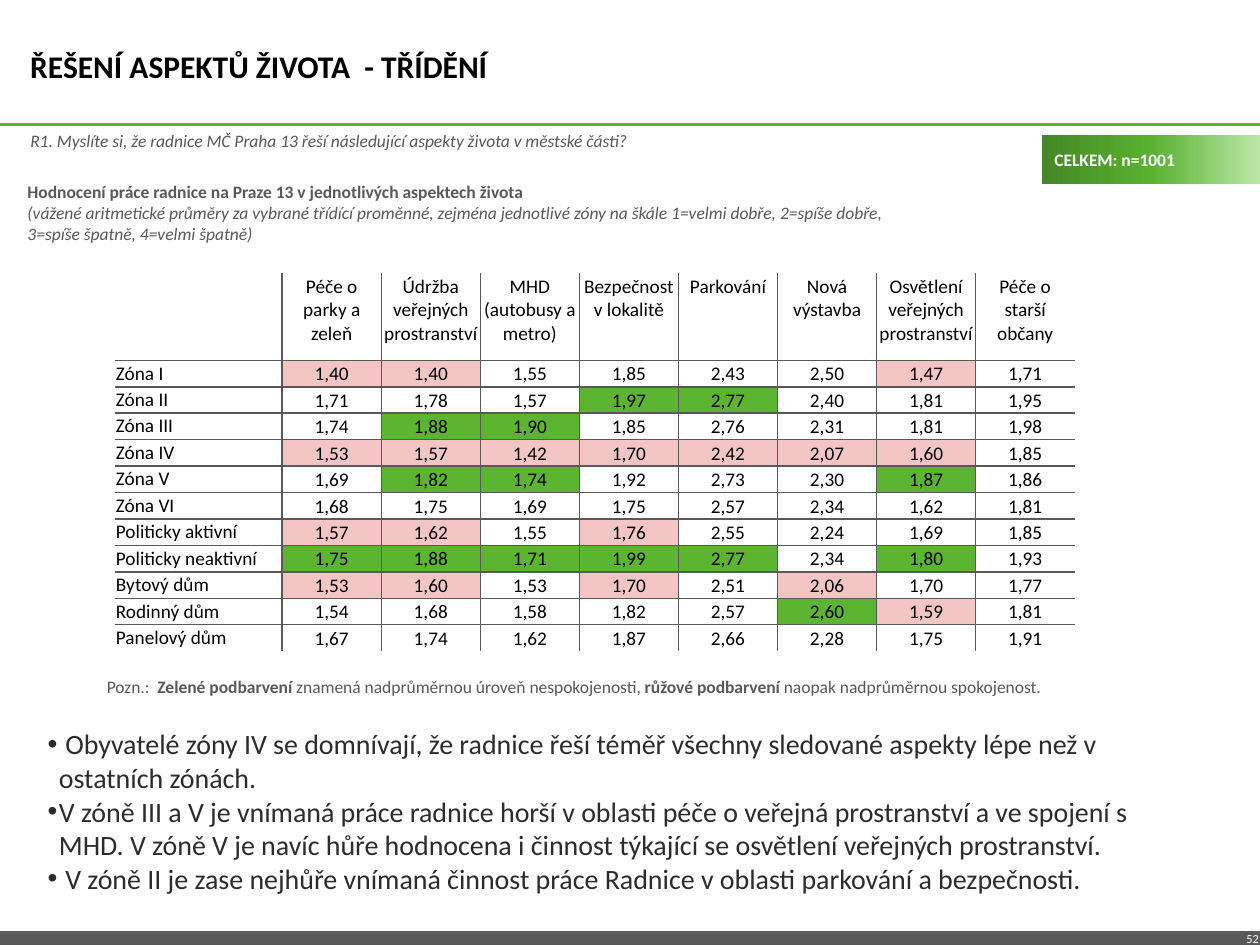
"""Build the slide comparing ratings of municipal services across resident groups."""
import copy

import pptx
import pptx.util
from lxml import etree
from pptx.dml.color import RGBColor
from pptx.enum.shapes import MSO_CONNECTOR, MSO_SHAPE
from pptx.enum.text import MSO_ANCHOR, PP_ALIGN
from pptx.oxml.ns import qn
from pptx.util import Inches

GREEN = RGBColor(0x5B, 0xB5, 0x31)
PINK = RGBColor(0xF3, 0xC6, 0xC5)
GRAY = RGBColor(0x59, 0x59, 0x59)
DARK = RGBColor(0x2C, 0x2C, 0x2C)
BLACK = RGBColor(0x00, 0x00, 0x00)
WHITE = RGBColor(0xFF, 0xFF, 0xFF)
BADGE_STOPS = [
    (0, RGBColor(0x44, 0x88, 0x25)),
    (0.5, RGBColor(0x58, 0xB2, 0x30)),
    (1, RGBColor(0xBB, 0xE7, 0xA7)),
]
FONT = "Calibri"

TITLE = "ŘEŠENÍ ASPEKTŮ ŽIVOTA  - TŘÍDĚNÍ"
QUESTION = "R1. Myslíte si, že radnice MČ Praha 13 řeší následující aspekty života v městské části?"
BADGE = "CELKEM: n=1001"
HEADING = "Hodnocení práce radnice na Praze 13 v jednotlivých aspektech života"
SCALE = (
    "(vážené aritmetické průměry za vybrané třídící proměnné, zejména jednotlivé zóny "
    "na škále 1=velmi dobře, 2=spíše dobře, \v3=spíše špatně, 4=velmi špatně)"
)
NOTE = [
    ("Pozn.:  ", ""),
    ("Zelené podbarvení ", "b"),
    ("znamená nadprůměrnou úroveň nespokojenosti, ", ""),
    ("růžové podbarvení ", "b"),
    ("naopak nadprůměrnou spokojenost.", ""),
]
FINDINGS = [
    " Obyvatelé zóny IV se domnívají, že radnice řeší téměř všechny sledované aspekty "
    "lépe než v ostatních zónách.",
    "V zóně III a V je vnímaná práce radnice horší v oblasti péče o veřejná prostranství "
    "a ve spojení s MHD. V zóně V je navíc hůře hodnocena i činnost týkající se osvětlení "
    "veřejných prostranství.",
    " V zóně II je zase nejhůře vnímaná činnost práce Radnice v oblasti parkování a bezpečnosti.",
]
ASPECTS = [
    "Péče o parky a zeleň", "Údržba veřejných prostranství", "MHD (autobusy a metro)",
    "Bezpečnost v lokalitě", "Parkování", "Nová výstavba",
    "Osvětlení veřejných prostranství", "Péče o starší občany",
]
MARKS = {"P": PINK, "G": GREEN}
RATINGS = [
    ("Zóna I", "1,40 1,40 1,55 1,85 2,43 2,50 1,47 1,71", "PP....P."),
    ("Zóna II", "1,71 1,78 1,57 1,97 2,77 2,40 1,81 1,95", "...GG..."),
    ("Zóna III", "1,74 1,88 1,90 1,85 2,76 2,31 1,81 1,98", ".GG....."),
    ("Zóna IV", "1,53 1,57 1,42 1,70 2,42 2,07 1,60 1,85", "PPPPPPP."),
    ("Zóna V", "1,69 1,82 1,74 1,92 2,73 2,30 1,87 1,86", ".GG...G."),
    ("Zóna VI", "1,68 1,75 1,69 1,75 2,57 2,34 1,62 1,81", "........"),
    ("Politicky aktivní", "1,57 1,62 1,55 1,76 2,55 2,24 1,69 1,85", "PP.P...."),
    ("Politicky neaktivní", "1,75 1,88 1,71 1,99 2,77 2,34 1,80 1,93", "GGGGG.G."),
    ("Bytový dům", "1,53 1,60 1,53 1,70 2,51 2,06 1,70 1,77", "PP.P.P.."),
    ("Rodinný dům", "1,54 1,68 1,58 1,82 2,57 2,60 1,59 1,81", ".....GP."),
    ("Panelový dům", "1,67 1,74 1,62 1,87 2,66 2,28 1,75 1,91", "........"),
]
TABLE_BOX = (0.91, 2.17, 7.62, 3)
LABEL_W, HEADER_H = 1.33, 0.69


def format_runs(p, size, color, style=""):
    for r in p.runs:
        r.font.name = FONT
        r.font.size = pptx.util.Pt(size)
        r.font.color.rgb = color
        r.font.bold = "b" in style
        r.font.italic = "i" in style


def set_margins(target, left, top, right, bottom):
    target.margin_left, target.margin_top = Inches(left), Inches(top)
    target.margin_right, target.margin_bottom = Inches(right), Inches(bottom)


def add_text(s, box, paragraphs, size, color, margins=(0.1, 0.05, 0.1, 0.05)):
    tf = s.shapes.add_textbox(*map(Inches, box)).text_frame
    tf.word_wrap = True
    set_margins(tf, *margins)
    for i, (text, style) in enumerate(paragraphs):
        p = tf.add_paragraph() if i else tf.paragraphs[0]
        p.text = text
        format_runs(p, size, color, style)
    return tf


def add_rule(s, x1, x2, y, color, width):
    line = s.shapes.add_connector(MSO_CONNECTOR.STRAIGHT, *map(Inches, (x1, y, x2, y)))
    line.line.color.rgb = color
    line.line.width = pptx.util.Pt(width)
    etree.SubElement(line._element.spPr, qn("a:effectLst"))


def add_badge(s):
    sp = s.shapes.add_shape(MSO_SHAPE.RECTANGLE, *map(Inches, (8.27, 1.07, 1.73, 0.39)))
    sp.shadow.inherit = False
    sp.line.fill.background()
    sp.fill.gradient()
    sp.fill.gradient_angle = 0
    stops = sp._element.spPr.find(".//" + qn("a:gsLst"))
    stops.append(copy.deepcopy(stops[0]))
    for stop, (position, color) in zip(sp.fill.gradient_stops, BADGE_STOPS):
        stop.position = position
        stop.color.rgb = color
    tf = sp.text_frame
    tf.text = BADGE
    tf.vertical_anchor = MSO_ANCHOR.MIDDLE
    tf.paragraphs[0].alignment = PP_ALIGN.LEFT
    format_runs(tf.paragraphs[0], 10, WHITE, "b")


def set_borders(cell, visible):
    tcPr = cell._tc.get_or_add_tcPr()
    for side in "LRTB":
        ln = etree.SubElement(tcPr, qn("a:ln" + side), w="12700")
        if side in visible:
            fill = etree.SubElement(ln, qn("a:solidFill"))
            etree.SubElement(fill, qn("a:srgbClr"), val=str(GRAY))
        else:
            etree.SubElement(ln, qn("a:noFill"))


def add_ratings(s):
    rows = [("", ASPECTS, "." * len(ASPECTS))]
    rows += [(name, values.split(), marks) for name, values, marks in RATINGS]
    n_rows, n_cols = len(rows), len(ASPECTS) + 1
    table = s.shapes.add_table(n_rows, n_cols, *map(Inches, TABLE_BOX)).table
    table.first_row = table.horz_banding = False
    for j, col in enumerate(table.columns):
        col.width = Inches((TABLE_BOX[2] - LABEL_W) / len(ASPECTS) if j else LABEL_W)
    for i, (name, values, marks) in enumerate(rows):
        table.rows[i].height = Inches((TABLE_BOX[3] - HEADER_H) / len(RATINGS) if i else HEADER_H)
        for j, (text, mark) in enumerate(zip([name, *values], "." + marks)):
            cell = table.cell(i, j)
            edges = {"L": j > 0, "R": j < n_cols - 1, "T": i > 0, "B": i < n_rows - 1}
            set_borders(cell, [side for side, shown in edges.items() if shown])
            if mark in MARKS:
                cell.fill.solid()
                cell.fill.fore_color.rgb = MARKS[mark]
            else:
                cell.fill.background()
            set_margins(cell, 0.01, 0.01, 0.01, 0)
            cell.vertical_anchor = MSO_ANCHOR.MIDDLE if i and j else MSO_ANCHOR.TOP
            p = cell.text_frame.paragraphs[0]
            p.text = text
            p.alignment = PP_ALIGN.CENTER if j else PP_ALIGN.LEFT
            format_runs(p, 11, BLACK)


def add_note(s):
    p = add_text(s, (0.75, 5.32, 8.74, 0.27), [("", "")], 10, GRAY).paragraphs[0]
    for text, style in NOTE:
        r = p.add_run()
        r.text = text
    format_runs(p, 10, GRAY)
    for r, (text, style) in zip(p.runs, NOTE):
        r.font.bold = style == "b"


def add_findings(s):
    tf = add_text(s, (0.28, 5.72, 9.13, 1.45), [(text, "") for text in FINDINGS], 16, DARK)
    for p in tf.paragraphs:
        pPr = p._p.get_or_add_pPr()
        pPr.set("marL", str(Inches(0.09)))
        pPr.set("indent", str(-Inches(0.09)))
        etree.SubElement(pPr, qn("a:buFont"), typeface="Arial")
        etree.SubElement(pPr, qn("a:buChar"), char="•")


def main():
    prs = pptx.Presentation()
    prs.slide_width, prs.slide_height = Inches(10), Inches(7.5)
    s = prs.slides.add_slide(prs.slide_layouts[6])
    add_rule(s, 0, 10, 0.99, GREEN, 2)
    add_rule(s, -0.01, 10.01, 7.45, GRAY, 9)
    number = add_text(s, (9.65, 7.39, 0.34, 0.08), [("52", "")], 7, WHITE, (0, 0, 0, 0))
    number.paragraphs[0].alignment = PP_ALIGN.RIGHT
    slim = (0.04, 0, 0.04, 0)
    add_text(s, (0.2, 1.03, 9.61, 0.17), [(QUESTION, "i")], 10, GRAY, slim)
    title = add_text(s, (0.2, 0.13, 7.87, 0.79), [(TITLE, "b")], 18, BLACK, slim)
    title.vertical_anchor = MSO_ANCHOR.MIDDLE
    add_badge(s)
    add_text(s, (0.12, 1.39, 7.24, 0.61), [(HEADING, "b"), (SCALE, "i")], 10, GRAY)
    add_findings(s)
    add_note(s)
    add_ratings(s)
    prs.save("out.pptx")


if __name__ == "__main__":
    main()
